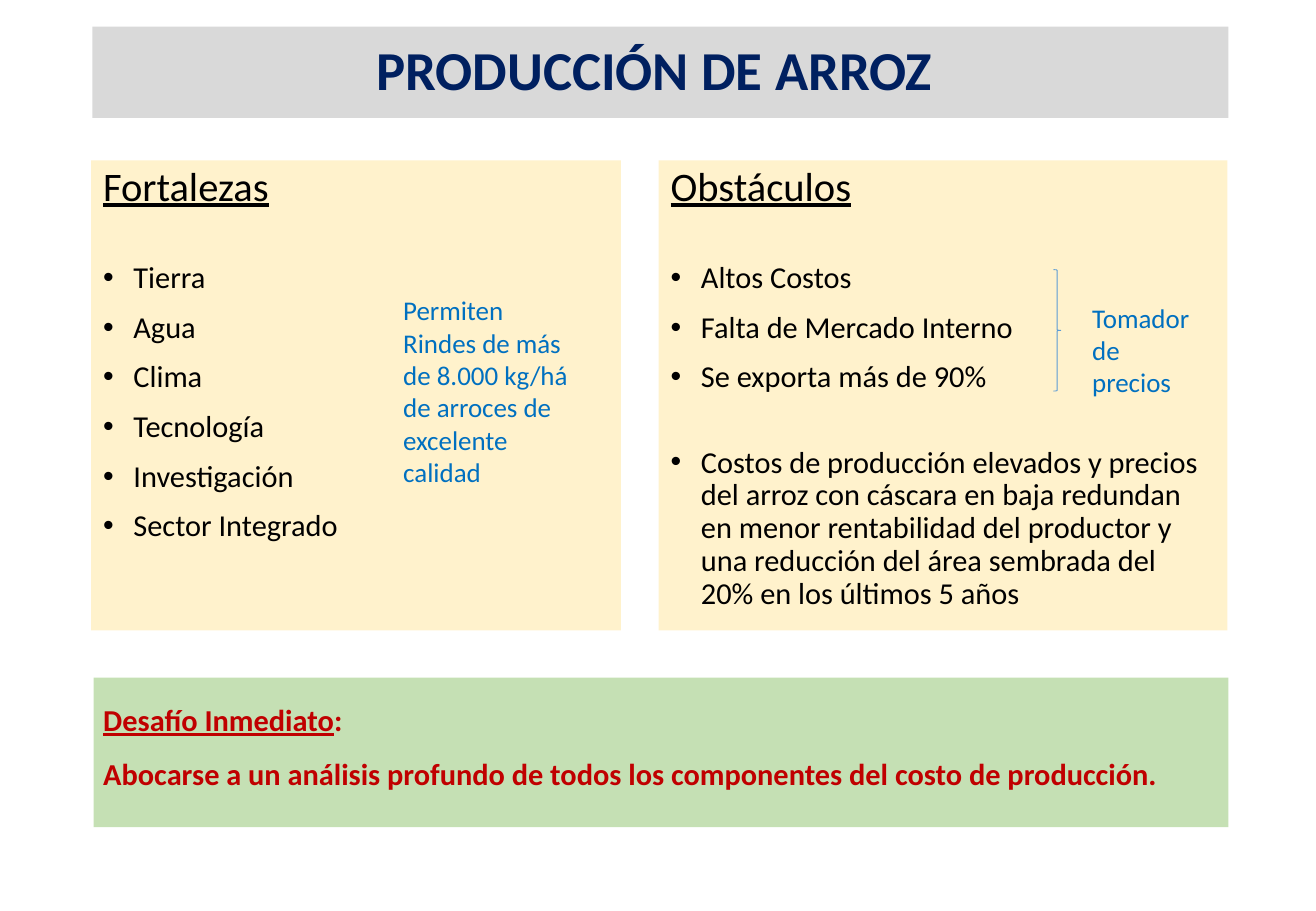
from lxml import etree
from pptx import Presentation
from pptx import util as u
from pptx.dml.color import RGBColor
from pptx.enum import shapes, text
from pptx.oxml import ns

PX = 9144
NAVY, BLACK, BLUE, RED = "002060", "000000", "0070C0", "C00000"
GREY, CREAM, GREEN, BRACE_BLUE = "D9D9D9", "FFF2CC", "C5E0B4", "5B9BD5"


def colour(value):
    """Turn a hex string into a colour."""
    return RGBColor.from_string(value)


class SlideBuilder:
    """Hold the style and the current slide, and add elements to it."""

    font_name = "Calibri"
    bullet_indent = 25

    def __init__(self, slide):
        self.slide = slide

    def place(self, box):
        """Turn left, top, width and height in px into EMU."""
        return [u.Emu(length * PX) for length in box]

    def panel(self, box, fill, anchor=text.MSO_ANCHOR.TOP, margins=(10, 5)):
        """Add a filled rectangle and return its text frame."""
        shape = self.slide.shapes.add_shape(
            shapes.MSO_SHAPE.RECTANGLE, *self.place(box))
        shape.shadow.inherit = False
        shape.fill.solid()
        shape.fill.fore_color.rgb = colour(fill)
        shape.line.fill.background()
        return self.set_frame(shape.text_frame, anchor, margins, True)

    def text_box(self, box, wrap):
        """Add a text box and return its text frame."""
        shape = self.slide.shapes.add_textbox(*self.place(box))
        return self.set_frame(
            shape.text_frame, text.MSO_ANCHOR.TOP, (10, 5), wrap)

    def set_frame(self, frame, anchor, margins, wrap):
        """Set the anchor, margins and wrapping of a text frame."""
        side, end = (u.Emu(margin * PX) for margin in margins)
        frame.margin_left = frame.margin_right = side
        frame.margin_top = frame.margin_bottom = end
        frame.vertical_anchor = anchor
        frame.word_wrap = wrap
        return frame

    def paragraph(self, frame, runs, size, ink, bold=False, spacing=1.0,
                  before=0, align=text.PP_ALIGN.LEFT, bullet=False):
        """Add a paragraph made of (wording, underlined) runs."""
        first = frame.paragraphs[0]
        paragraph = frame.add_paragraph() if first.runs else first
        paragraph.alignment = align
        paragraph.line_spacing = spacing
        paragraph.space_before = u.Pt(before)
        if bullet:
            self.add_bullet(paragraph)
        for wording, underlined in runs:
            run = paragraph.add_run()
            run.text = wording
            run.font.name = self.font_name
            run.font.size = u.Pt(size)
            run.font.bold = bold
            run.font.underline = underlined
            run.font.color.rgb = colour(ink)

    def add_bullet(self, paragraph):
        """Give a paragraph a round bullet and a hanging indent."""
        properties = paragraph._p.get_or_add_pPr()
        properties.set("marL", str(self.bullet_indent * PX))
        properties.set("indent", str(-self.bullet_indent * PX))
        etree.SubElement(properties, ns.qn("a:buFont"), typeface="Arial")
        etree.SubElement(properties, ns.qn("a:buChar"), char="•")

    def list_panel(self, box, heading, groups):
        """Add a panel with a heading and groups of bullets."""
        frame = self.panel(box, CREAM)
        self.paragraph(frame, [(heading, True)], 24, BLACK, spacing=0.9)
        for group in groups:
            for index, item in enumerate(group):
                self.paragraph(frame, [(item, False)], 18, BLACK, spacing=0.9,
                               before=10 if index else 31, bullet=True)

    def note(self, box, lines, wrap):
        """Add a blue remark."""
        frame = self.text_box(box, wrap)
        for line in lines:
            self.paragraph(frame, [(line, False)], 16, BLUE)

    def brace(self, box):
        """Add a thin right brace."""
        shape = self.slide.shapes.add_shape(
            shapes.MSO_SHAPE.RIGHT_BRACE, *self.place(box))
        shape.shadow.inherit = False
        shape.fill.background()
        shape.line.color.rgb = colour(BRACE_BLUE)
        shape.line.width = u.Pt(0.5)


def main():
    """Build and save the slide."""
    presentation = Presentation()
    presentation.slide_width = u.Emu(1083 * PX)
    presentation.slide_height = u.Emu(750 * PX)
    builder = SlideBuilder(
        presentation.slides.add_slide(presentation.slide_layouts[6]))

    title = builder.panel((76, 22, 935, 75), GREY, text.MSO_ANCHOR.MIDDLE)
    builder.paragraph(title, [("PRODUCCIÓN DE ARROZ ", False)], 32.5, NAVY,
                      bold=True, spacing=0.9, align=text.PP_ALIGN.CENTER)

    builder.list_panel((75, 132, 436, 387), "Fortalezas", [
        ["Tierra", "Agua", "Clima", "Tecnología", "Investigación",
         "Sector Integrado"]])
    builder.list_panel((542, 132, 468, 387), "Obstáculos", [
        ["Altos Costos", "Falta de Mercado Interno", "Se exporta más de 90%"],
        ["Costos de producción elevados y precios del arroz con cáscara en "
         "baja redundan en menor rentabilidad del productor y una reducción "
         "del área sembrada del 20% en los últimos 5 años"]])

    builder.note((322, 237, 162, 172), [
        "Permiten Rindes de más de 8.000 kg/há de arroces de excelente "
        "calidad"], True)
    builder.note((889, 243, 106, 59), ["Tomador", "de precios"], False)

    challenge = builder.panel((77, 558, 934, 123), GREEN, margins=(8, 4))
    for runs in (
        [("Desafío Inmediato", True), (":", False)],
        [("Abocarse a un análisis profundo de todos los componentes del "
          "costo de producción.", False)],
    ):
        builder.paragraph(challenge, runs, 18, RED, bold=True, spacing=1.5)

    builder.brace((867, 222, 6, 100))
    presentation.save("out.pptx")


if __name__ == "__main__":
    main()
